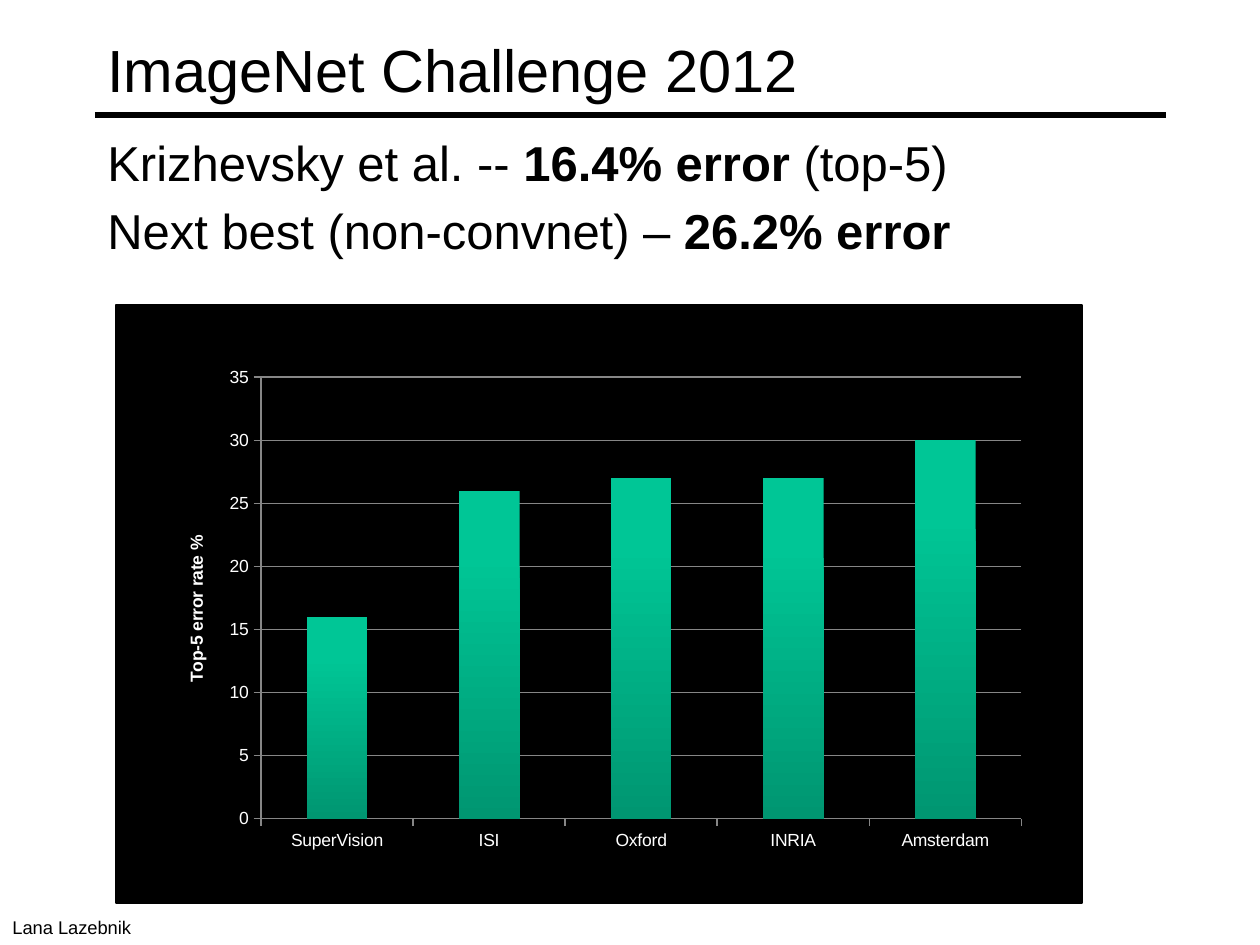
from typing import NamedTuple

from lxml import etree
from pptx import Presentation
from pptx import util as u
from pptx.chart.data import CategoryChartData
from pptx.dml.color import RGBColor
from pptx.enum import chart as ch, shapes, text
from pptx.oxml import parse_xml
from pptx.oxml.ns import nsdecls, qn

PX = 914400 / 126
BLACK = RGBColor(0, 0, 0)
WHITE = RGBColor(255, 255, 255)
GRAY = RGBColor(0x86, 0x86, 0x86)
GREEN = RGBColor(0, 0xC6, 0x96)
DARK = RGBColor(0, 0x96, 0x71)
FONT = "Arial"


class Run(NamedTuple):
    words: str
    bold: bool = False


class Box(NamedTuple):
    left: int
    top: int
    width: int
    height: int
    size: float
    paras: list[list[Run]]
    anchor: text.MSO_ANCHOR = text.MSO_ANCHOR.TOP
    wrap: bool = True
    gap: float = 0


BOXES = [
    Box(95, 11, 1071, 116, 34, [[Run("ImageNet Challenge 2012")]],
        anchor=text.MSO_ANCHOR.MIDDLE),
    Box(95, 126, 1071, 160, 28, [
        [Run("Krizhevsky et al. -- "), Run("16.4% error ", True), Run("(top-5)")],
        [Run("Next best (non-convnet) – "), Run("26.2% error", True)],
    ], gap=5.6),
    Box(0, 910, 146, 35, 10.5, [[Run("Lana Lazebnik")]], wrap=False),
]
RATES = {"SuperVision": 16, "ISI": 26, "Oxford": 27, "INRIA": 27,
         "Amsterdam": 30}


def px(*sides: int) -> list[u.Emu]:
    return [u.Emu(round(side * PX)) for side in sides]


def style(font, size: float, color: RGBColor, bold: bool = False) -> None:
    font.name, font.size, font.bold = FONT, u.Pt(size), bold
    font.color.rgb = color


def add_text(slide, box: Box) -> None:
    frame = slide.shapes.add_textbox(*px(*box[:4])).text_frame
    frame.word_wrap = box.wrap
    frame.vertical_anchor = box.anchor
    for i, runs in enumerate(box.paras):
        para = frame.paragraphs[0] if i == 0 else frame.add_paragraph()
        para.space_before = u.Pt(box.gap)
        for part in runs:
            run = para.add_run()
            run.text = part.words
            style(run.font, box.size, BLACK, part.bold)


def add_rule(slide) -> None:
    rule = slide.shapes.add_connector(
        shapes.MSO_CONNECTOR.STRAIGHT, *px(95, 115, 1166, 115))
    rule.line.color.rgb = BLACK
    rule.line.width = u.Pt(3)
    etree.SubElement(rule._element.spPr, qn("a:effectLst"))


def add_panel(slide) -> None:
    panel = slide.shapes.add_shape(
        shapes.MSO_SHAPE.RECTANGLE, *px(116, 305, 966, 598))
    panel.shadow.inherit = False
    panel.fill.solid()
    panel.fill.fore_color.rgb = BLACK
    panel.line.color.rgb = BLACK
    panel.line.width = u.Pt(0.75)


def add_bars(slide) -> None:
    data = CategoryChartData()
    data.categories = list(RATES)
    data.add_series("Series 1", list(RATES.values()))
    chart = slide.shapes.add_chart(
        ch.XL_CHART_TYPE.COLUMN_CLUSTERED, *px(155, 357, 884, 502), data).chart
    chart.has_legend = chart.has_title = False
    style(chart.font, 10, WHITE)

    # Axes
    for axis in (chart.category_axis, chart.value_axis):
        axis.major_tick_mark = ch.XL_TICK_MARK.OUTSIDE
        axis.format.line.color.rgb = GRAY
        style(axis.tick_labels.font, 10, WHITE)
    rate = chart.value_axis
    rate.minimum_scale, rate.maximum_scale, rate.major_unit = 0, 35, 5
    rate.major_gridlines.format.line.color.rgb = GRAY
    run = rate.axis_title.text_frame.paragraphs[0].add_run()
    run.text = "Top-5 error rate %"
    style(run.font, 10, WHITE, True)

    # Bars shaded from top to bottom
    plot = chart.plots[0]
    plot.gap_width = 150
    plot.vary_by_categories = False
    fill = plot.series[0].format.fill
    fill.gradient()
    fill.gradient_angle = 270
    for stop, color, place in zip(fill.gradient_stops, (GREEN, DARK), (0.2, 1)):
        stop.color.rgb = color
        stop.position = place

    # Inner plot area as shares of the chart frame
    area = chart._chartSpace.chart.plotArea
    for old in area.findall(qn("c:layout")):
        area.remove(old)
    shares = {"x": 0.12, "y": 0.04, "w": 0.86, "h": 0.88}
    area.insert(0, parse_xml(
        f'<c:layout {nsdecls("c")}><c:manualLayout><c:layoutTarget val="inner"/>'
        '<c:xMode val="edge"/><c:yMode val="edge"/>'
        + "".join(f'<c:{key} val="{val}"/>' for key, val in shares.items())
        + "</c:manualLayout></c:layout>"))


def main() -> None:
    deck = Presentation()
    deck.slide_width, deck.slide_height = px(1260, 945)
    slide = deck.slides.add_slide(deck.slide_layouts[6])
    add_rule(slide)
    add_panel(slide)
    for box in BOXES:
        add_text(slide, box)
    add_bars(slide)
    deck.save("out.pptx")


if __name__ == "__main__":
    main()
